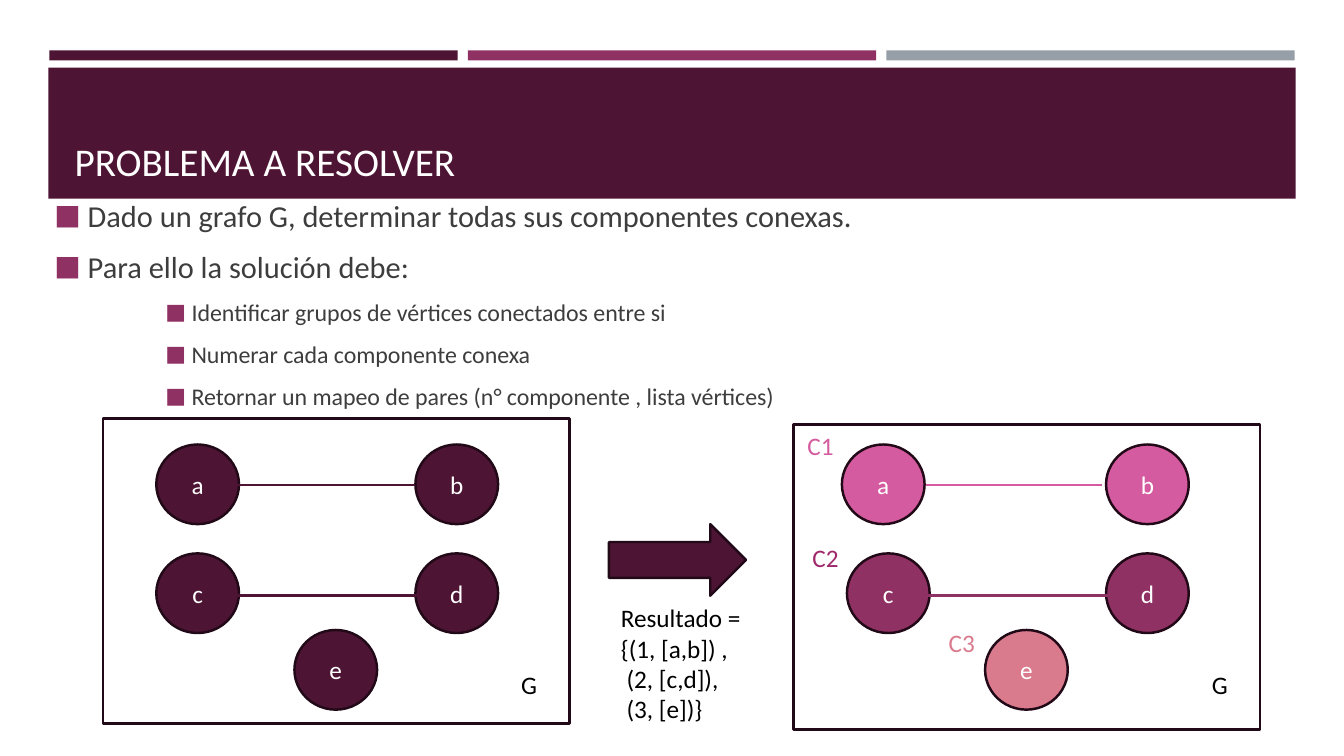
from dataclasses import dataclass

from lxml.etree import SubElement
from pptx import Presentation
from pptx.dml.color import RGBColor
from pptx.enum.shapes import MSO_CONNECTOR, MSO_SHAPE
from pptx.enum.text import MSO_ANCHOR, MSO_AUTO_SIZE, PP_ALIGN
from pptx.oxml.ns import qn
from pptx.shapes.autoshape import Shape
from pptx.slide import Slide
from pptx.text.text import TextFrame, _Paragraph as Paragraph
from pptx.util import Inches, Pt

FONT = "Calibri"
WHITE = RGBColor(0xFF, 0xFF, 0xFF)
BLACK = RGBColor(0x00, 0x00, 0x00)
BODY_GRAY = RGBColor(0x3D, 0x3D, 0x3D)
STEEL = RGBColor(0x96, 0x9F, 0xA7)
WINE = RGBColor(0x4D, 0x14, 0x34)
OUTLINE = RGBColor(0x22, 0x09, 0x17)
PLUM = RGBColor(0x90, 0x31, 0x63)
PINK = RGBColor(0xD4, 0x5B, 0x9F)
MAGENTA = RGBColor(0x9F, 0x29, 0x6B)
SALMON = RGBColor(0xDA, 0x7B, 0x8D)

LINE_WIDTH = Pt(1.75)
NODE_SIZE = (0.82, 0.79)
PANEL_SIZE = (4.63, 3.03)
TOP_ROW, MIDDLE_ROW, BOTTOM_ROW = 4.41, 5.49, 6.25


@dataclass(frozen=True)
class Node:
    name: str
    left: float
    top: float
    color: RGBColor


@dataclass(frozen=True)
class Edge:
    start: float
    end: float
    y: float
    color: RGBColor


@dataclass(frozen=True)
class Label:
    text: str
    left: float
    top: float
    width: float
    color: RGBColor = BLACK
    height: float = 0.4
    wrap: bool = True


@dataclass(frozen=True)
class Graph:
    panel: tuple[float, float]
    nodes: list[Node]
    edges: list[Edge]
    labels: list[Label]


@dataclass(frozen=True)
class Bullet:
    text: str
    level: int = 0


@dataclass(frozen=True)
class BulletStyle:
    size: float
    indent: float
    hanging: float


BULLETS = [
    Bullet("Dado un grafo G, determinar todas sus componentes conexas."),
    Bullet("Para ello la solución debe:"),
    Bullet("Identificar grupos de vértices conectados entre si", 3),
    Bullet("Numerar cada componente conexa", 3),
    Bullet("Retornar un mapeo de pares (n° componente , lista vértices)", 3),
]
BULLET_STYLES = {0: BulletStyle(21.7, 0.33, 0.33), 3: BulletStyle(17.1, 1.36, 0.26)}

GRAPHS = [
    Graph(
        panel=(1.02, 4.15),
        nodes=[
            Node("a", 1.55, TOP_ROW, WINE),
            Node("b", 4.12, TOP_ROW, WINE),
            Node("c", 1.55, MIDDLE_ROW, WINE),
            Node("d", 4.12, MIDDLE_ROW, WINE),
            Node("e", 2.92, BOTTOM_ROW, WINE),
        ],
        edges=[Edge(2.21, 4.12, 4.81, WINE), Edge(2.33, 4.24, 5.91, WINE)],
        labels=[Label("G", 5.07, 6.59, 0.45)],
    ),
    Graph(
        panel=(7.87, 4.21),
        nodes=[
            Node("a", 8.35, TOP_ROW, PINK),
            Node("b", 10.97, TOP_ROW, PINK),
            Node("c", 8.4, MIDDLE_ROW, PLUM),
            Node("d", 10.97, MIDDLE_ROW, PLUM),
            Node("e", 9.77, BOTTOM_ROW, SALMON),
        ],
        edges=[Edge(9.18, 10.93, 4.81, PINK), Edge(9.18, 11.09, 5.91, PLUM)],
        labels=[
            Label("G", 11.92, 6.59, 0.45),
            Label("C1", 7.91, 4.22, 0.51, PINK, wrap=False),
            Label("C2", 7.96, 5.33, 0.51, MAGENTA, wrap=False),
            Label("C3", 9.31, 6.17, 0.51, SALMON, wrap=False),
        ],
    ),
]
RESULT = Label("Resultado =\n{(1, [a,b]) ,\n (2, [c,d]),\n (3, [e])}", 6.06, 5.93, 1.5, height=1.31)


def write_text(frame: TextFrame, text: str, *, size: float = 18, color: RGBColor = BLACK,
               align: PP_ALIGN = PP_ALIGN.LEFT, anchor: MSO_ANCHOR = MSO_ANCHOR.TOP,
               wrap: bool = True, auto_size: MSO_AUTO_SIZE = MSO_AUTO_SIZE.NONE) -> None:
    frame.text = text
    frame.word_wrap = wrap
    frame.auto_size = auto_size
    frame.vertical_anchor = anchor
    for paragraph in frame.paragraphs:
        paragraph.alignment = align
        for run in paragraph.runs:
            run.font.name = FONT
            run.font.size = Pt(size)
            run.font.color.rgb = color


def add_shape(slide: Slide, kind: MSO_SHAPE, left: float, top: float, width: float, height: float,
              *, fill: RGBColor | None = None, outline: RGBColor | None = None) -> Shape:
    shape = slide.shapes.add_shape(kind, Inches(left), Inches(top), Inches(width), Inches(height))
    shape.shadow.inherit = False
    if fill is None:
        shape.fill.background()
    else:
        shape.fill.solid()
        shape.fill.fore_color.rgb = fill
    if outline is None:
        shape.line.fill.background()
    else:
        shape.line.color.rgb = outline
        shape.line.width = LINE_WIDTH
    return shape


def add_edge(slide: Slide, edge: Edge) -> None:
    connector = slide.shapes.add_connector(MSO_CONNECTOR.STRAIGHT, Inches(edge.start), Inches(edge.y),
                                           Inches(edge.end), Inches(edge.y))
    connector.line.color.rgb = edge.color
    connector.line.width = LINE_WIDTH
    SubElement(connector._element.spPr, qn("a:effectLst"))


def add_label(slide: Slide, label: Label) -> None:
    box = slide.shapes.add_textbox(Inches(label.left), Inches(label.top),
                                   Inches(label.width), Inches(label.height))
    write_text(box.text_frame, label.text, color=label.color, wrap=label.wrap,
               auto_size=MSO_AUTO_SIZE.SHAPE_TO_FIT_TEXT)


def add_graph(slide: Slide, graph: Graph) -> None:
    for node in graph.nodes:
        circle = add_shape(slide, MSO_SHAPE.OVAL, node.left, node.top, *NODE_SIZE,
                           fill=node.color, outline=OUTLINE)
        write_text(circle.text_frame, node.name, color=WHITE, align=PP_ALIGN.CENTER,
                   anchor=MSO_ANCHOR.MIDDLE)
    for edge in graph.edges:
        add_edge(slide, edge)
    add_shape(slide, MSO_SHAPE.RECTANGLE, *graph.panel, *PANEL_SIZE, outline=OUTLINE)
    for label in graph.labels:
        add_label(slide, label)


def format_bullet(paragraph: Paragraph, level: int) -> None:
    style = BULLET_STYLES[level]
    paragraph.level = level
    paragraph.space_after = Pt(6)
    paragraph.runs[0].font.size = Pt(style.size)
    properties = paragraph._p.get_or_add_pPr()
    properties.set("marL", str(Inches(style.indent)))
    properties.set("indent", str(-Inches(style.hanging)))
    bullet_color = SubElement(properties, qn("a:buClr"))
    SubElement(bullet_color, qn("a:srgbClr"), val=str(PLUM))
    SubElement(properties, qn("a:buSzPct"), val="92000")
    SubElement(properties, qn("a:buFont"), typeface=FONT)
    SubElement(properties, qn("a:buChar"), char="■")


def place(shape: Shape, left: float, top: float, width: float, height: float) -> None:
    shape.left, shape.top = Inches(left), Inches(top)
    shape.width, shape.height = Inches(width), Inches(height)


def add_header(slide: Slide) -> None:
    """Draw the three-colour strip and the title band behind the placeholders."""
    bars = [add_shape(slide, MSO_SHAPE.RECTANGLE, 0.49 + 4.15 * column, 0.5, 4.05, 0.1, fill=color)
            for column, color in enumerate((WINE, PLUM, STEEL))]
    bars.append(add_shape(slide, MSO_SHAPE.RECTANGLE, 0.48, 0.67, 12.37, 1.3, fill=WINE))
    for bar in reversed(bars):
        slide.shapes._spTree.insert(2, bar._element)


def main() -> None:
    presentation = Presentation()
    presentation.slide_width, presentation.slide_height = Inches(13.33), Inches(7.5)
    slide = presentation.slides.add_slide(presentation.slide_layouts[1])
    add_header(slide)

    title, body = slide.shapes.title, slide.placeholders[1]
    place(title, 0.64, 0.77, 12.06, 1.11)
    write_text(title.text_frame, "PROBLEMA A RESOLVER", size=28, color=WHITE, anchor=MSO_ANCHOR.BOTTOM)
    place(body, 0.44, 2, 12.89, 2.02)
    write_text(body.text_frame, "\n".join(bullet.text for bullet in BULLETS), color=BODY_GRAY,
               anchor=MSO_ANCHOR.MIDDLE)
    for paragraph, bullet in zip(body.text_frame.paragraphs, BULLETS):
        format_bullet(paragraph, bullet.level)

    for graph in GRAPHS:
        add_graph(slide, graph)
    add_shape(slide, MSO_SHAPE.RIGHT_ARROW, 6.04, 5.2, 1.36, 0.71, fill=WINE, outline=OUTLINE)
    add_label(slide, RESULT)
    presentation.save("out.pptx")


if __name__ == "__main__":
    main()
